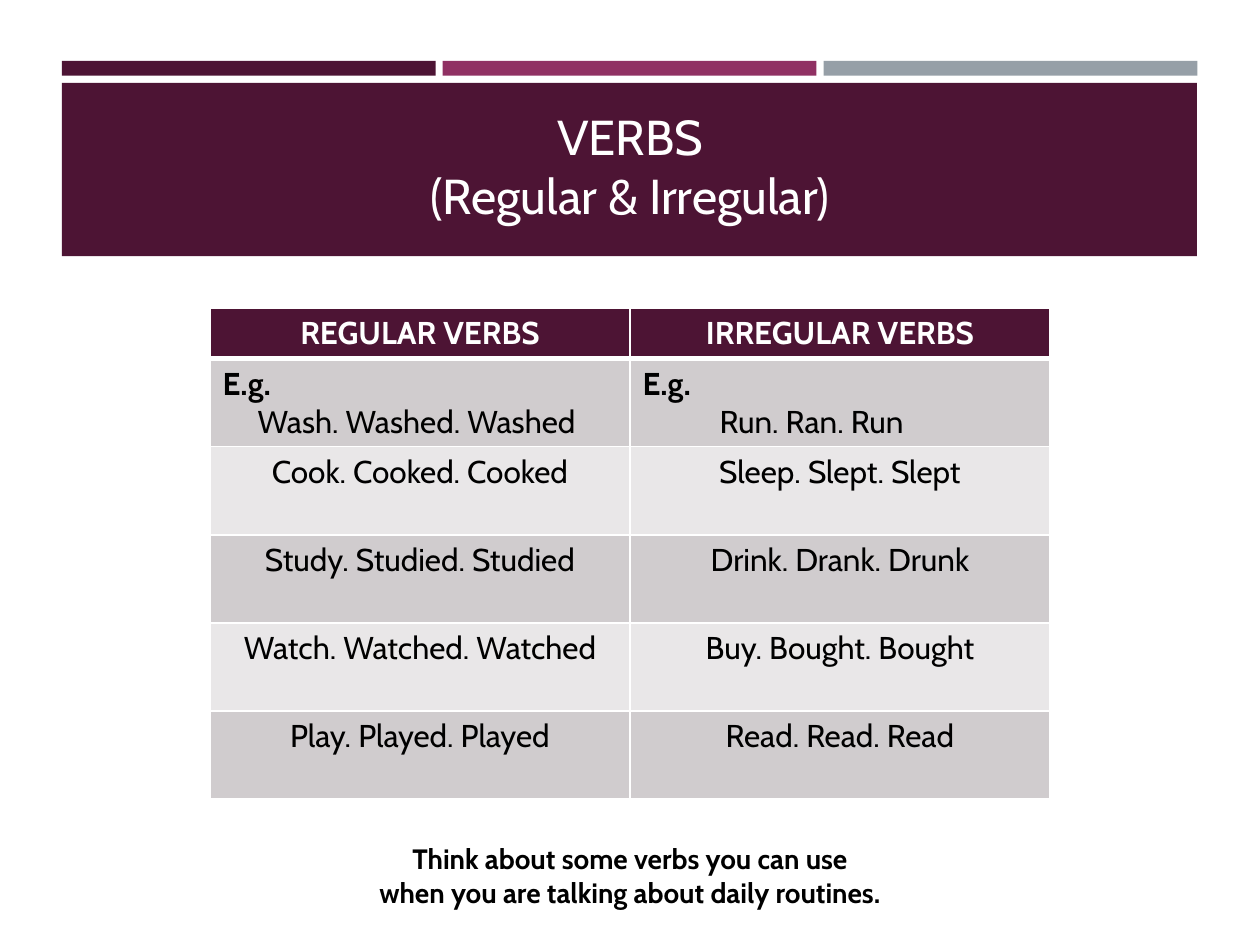
from lxml import etree
from pptx import Presentation
from pptx import util as u
from pptx.dml.color import RGBColor
from pptx.enum import shapes, text
from pptx.oxml import ns

HUES = {"plum": "4D1434", "rose": "903163", "gray": "969FA7",
        "dark": "D0CCCE", "pale": "E9E7E8", "white": "FFFFFF", "black": "000000"}
MID = text.PP_ALIGN.CENTER


class Deck:
    font = "Cabin"

    def __init__(self, wide, high):
        self.prs = Presentation()
        self.prs.slide_width, self.prs.slide_height = u.Pt(wide), u.Pt(high)
        self.slide = self.prs.slides.add_slide(self.prs.slide_layouts[6])

    def paint(self, part, hue):
        part.fill.solid()
        part.fill.fore_color.rgb = RGBColor.from_string(HUES[hue])

    def bar(self, x, y, w, h, hue):
        box = self.slide.shapes.add_shape(
            shapes.MSO_SHAPE.RECTANGLE, *map(u.Pt, (x, y, w, h)))
        box.shadow.inherit = False
        self.paint(box, hue)
        box.line.fill.background()

    def words(self, frame, lines, size, hue, bold=False, align=MID):
        for i, line in enumerate(lines):
            para = frame.add_paragraph() if i else frame.paragraphs[0]
            para.text = line
            para.alignment = align
            font = para.font
            font.name, font.size, font.bold = self.font, u.Pt(size), bold
            font.color.rgb = RGBColor.from_string(HUES[hue])

    def label(self, x, y, w, h, lines, size, hue, bold=False, low=False):
        frame = self.slide.shapes.add_textbox(*map(u.Pt, (x, y, w, h))).text_frame
        frame.word_wrap = True
        if low:
            frame.vertical_anchor = text.MSO_ANCHOR.BOTTOM
        self.words(frame, lines, size, hue, bold)

    def edge(self, cell, top, base):
        props = cell._tc.get_or_add_tcPr()
        for side, width in zip("LRTB", (1, 1, top, base)):
            line = etree.SubElement(props, ns.qn(f"a:ln{side}"), w=str(u.Pt(width)))
            fill = etree.SubElement(line, ns.qn("a:solidFill"))
            etree.SubElement(fill, ns.qn("a:srgbClr"), val=HUES["white"])

    def table(self, x, y, w, heads, rows, indents, head_h, row_h):
        high = head_h + row_h * len(rows)
        grid = self.slide.shapes.add_table(
            len(rows) + 1, len(heads), *map(u.Pt, (x, y, w, high))).table
        for r, row in enumerate([heads, *rows]):
            grid.rows[r].height = u.Pt(row_h if r else head_h)
            for c, line in enumerate(row):
                cell = grid.cell(r, c)
                self.edge(cell, 3 if r == 1 else 1, 1 if r else 3)
                self.paint(cell, ("dark" if r % 2 else "pale") if r else "plum")
                frame = cell.text_frame
                if r == 1:
                    # Example row: bold lead, then an indented verb
                    self.words(frame, ["E.g.", line], 18, "black",
                               align=text.PP_ALIGN.LEFT)
                    lead, verb = frame.paragraphs
                    lead.font.bold = True
                    verb._p.get_or_add_pPr().set("marL", str(u.Pt(indents[c])))
                else:
                    self.words(frame, [line], 18, "black" if r else "white", not r)


def main():
    deck = Deck(720, 540)

    # Top bars and title band
    for i, hue in enumerate(("plum", "rose", "gray")):
        deck.bar(35.4 + 217.6 * i, 34.8, 213.6, 8.5, hue)
    deck.bar(35.4, 47.4, 648.6, 99, "plum")
    deck.label(45.4, 46.8, 629.3, 85, ["VERBS\v(Regular & Irregular)"],
               28, "white", low=True)

    # Closing prompt
    deck.label(40.3, 477.4, 639.4, 46,
               ["Think about some verbs you can use",
                "when you are talking about daily routines."],
               16, "black", bold=True)

    # Verb table
    verbs = [("Wash. Washed. Washed", "Run. Ran. Run"),
             ("Cook. Cooked. Cooked", "Sleep. Slept. Slept"),
             ("Study. Studied. Studied", "Drink. Drank. Drunk"),
             ("Watch. Watched. Watched", "Buy. Bought. Bought"),
             ("Play. Played. Played", "Read. Read. Read")]
    deck.table(120, 176, 480, ("REGULAR VERBS", "IRREGULAR VERBS"), verbs,
               indents=(20, 44), head_h=28.7, row_h=50.35)

    deck.prs.save("out.pptx")


if __name__ == "__main__":
    main()
